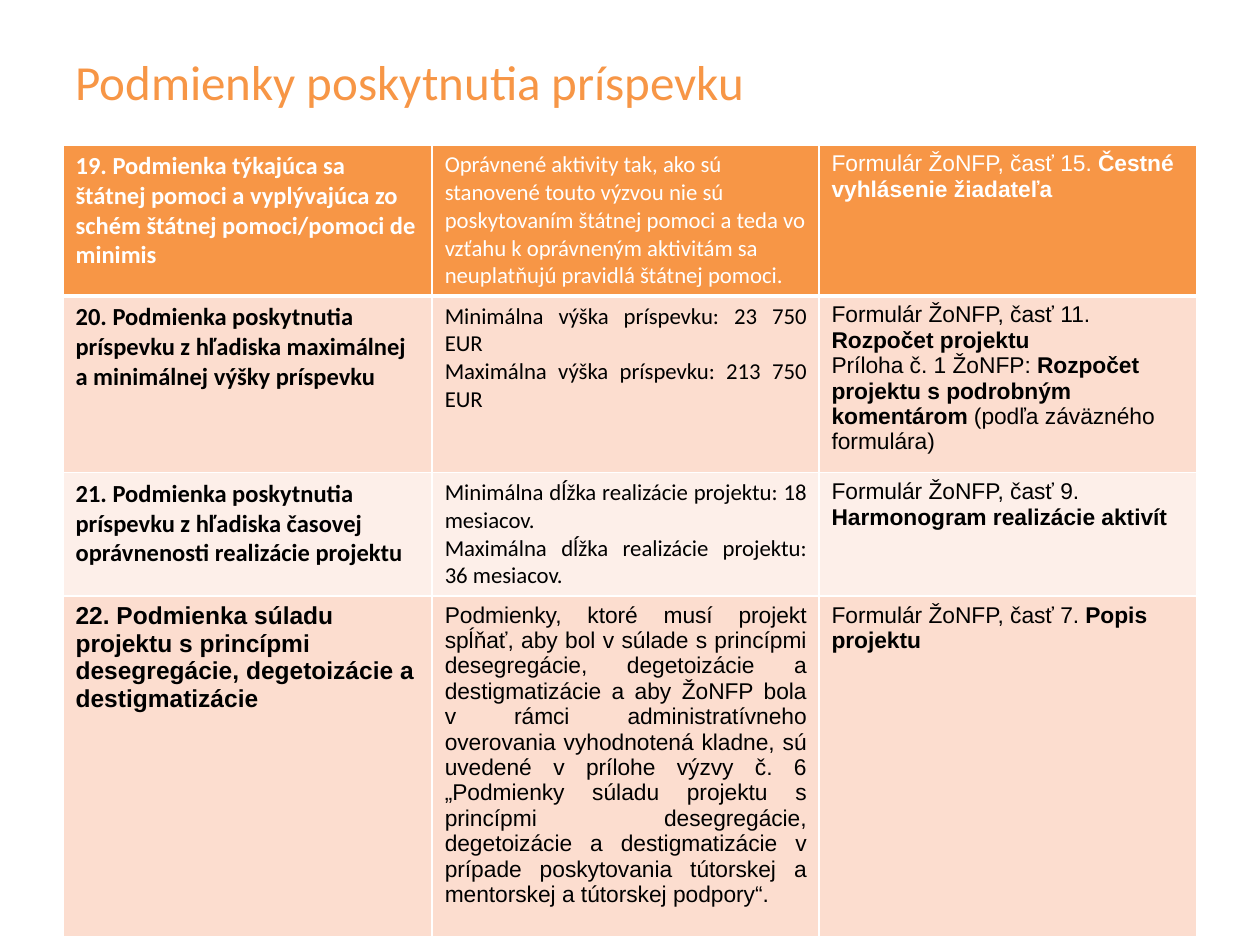
from dataclasses import dataclass
from typing import NamedTuple

from lxml import etree
from pptx import Presentation
from pptx.dml.color import RGBColor
from pptx.enum.text import MSO_ANCHOR, PP_ALIGN
from pptx.oxml.ns import qn
from pptx.util import Inches, Pt

MIDDLE = MSO_ANCHOR.MIDDLE
LEFT, JUSTIFY = PP_ALIGN.LEFT, PP_ALIGN.JUSTIFY


@dataclass(frozen=True)
class Theme:
    accent: str = "F79646"
    band_dark: str = "FCDDCF"
    band_light: str = "FDEFE9"
    white: str = "FFFFFF"
    black: str = "000000"
    heading_font: str = "Calibri"
    body_font: str = "Arial"
    title_size: int = 28
    condition_size: int = 14
    detail_size: int = 13
    border: int = 1
    header_border: int = 3


class Span(NamedTuple):
    text: str
    bold: bool = False


class Style(NamedTuple):
    font: str
    size: int
    color: str
    align: PP_ALIGN = LEFT


class Condition(NamedTuple):
    height: float
    name: str
    details: list[str]
    evidence: list[list[Span]]
    font: str


THEME = Theme()
COLUMN_WIDTHS = (2.93, 3.07, 3.0)

CONDITIONS = [
    Condition(
        1.2,
        "19. Podmienka týkajúca sa štátnej pomoci a vyplývajúca zo schém "
        "štátnej pomoci/pomoci de minimis",
        ["Oprávnené aktivity tak, ako sú stanovené touto výzvou nie sú "
         "poskytovaním štátnej pomoci a teda vo vzťahu k oprávneným aktivitám "
         "sa neuplatňujú pravidlá štátnej pomoci."],
        [[Span("Formulár ŽoNFP, časť 15. "),
          Span("Čestné vyhlásenie žiadateľa", True)]],
        THEME.heading_font,
    ),
    Condition(
        1.3,
        "20. Podmienka poskytnutia príspevku z hľadiska maximálnej "
        "a minimálnej výšky príspevku",
        ["Minimálna výška príspevku: 23 750 EUR",
         "Maximálna výška príspevku: 213 750 EUR"],
        [[Span("Formulár ŽoNFP, časť 11. "), Span("Rozpočet projektu", True)],
         [Span("Príloha č. 1 ŽoNFP: "),
          Span("Rozpočet projektu s podrobným komentárom ", True),
          Span("(podľa záväzného formulára)")]],
        THEME.heading_font,
    ),
    Condition(
        0.98,
        "21. Podmienka poskytnutia príspevku z hľadiska časovej "
        "oprávnenosti realizácie projektu",
        ["Minimálna dĺžka realizácie projektu: 18 mesiacov.",
         "Maximálna dĺžka realizácie projektu: 36 mesiacov."],
        [[Span("Formulár ŽoNFP, časť 9. "),
          Span("Harmonogram realizácie aktivít", True)]],
        THEME.heading_font,
    ),
    Condition(
        2.52,
        "22. Podmienka súladu projektu s princípmi desegregácie, "
        "degetoizácie a destigmatizácie",
        ["Podmienky, ktoré musí projekt spĺňať, aby bol v súlade s princípmi "
         "desegregácie, degetoizácie a destigmatizácie a aby ŽoNFP bola v rámci "
         "administratívneho overovania vyhodnotená kladne, sú uvedené v prílohe "
         "výzvy č. 6 „Podmienky súladu projektu s princípmi desegregácie, "
         "degetoizácie a destigmatizácie v prípade poskytovania tútorskej "
         "a mentorskej a tútorskej podpory“."],
        [[Span("Formulár ŽoNFP, časť 7. "), Span("Popis projektu", True)]],
        THEME.body_font,
    ),
]


def write(tf, paragraphs: list[list[Span]], style: Style) -> None:
    tf.word_wrap = True
    for i, spans in enumerate(paragraphs):
        p = tf.add_paragraph() if i else tf.paragraphs[0]
        p.alignment = style.align
        for span in spans:
            r = p.add_run()
            r.text = span.text
            r.font.name = style.font
            r.font.size = Pt(style.size)
            r.font.bold = span.bold
            r.font.color.rgb = RGBColor.from_string(style.color)


def set_borders(cell, top: int, bottom: int) -> None:
    """Draw white cell borders; lines must precede the fill in tcPr."""
    tc_pr = cell._tc.get_or_add_tcPr()
    sides = {"a:lnL": THEME.border, "a:lnR": THEME.border, "a:lnT": top, "a:lnB": bottom}
    for i, (tag, width) in enumerate(sides.items()):
        ln = etree.Element(qn(tag), w=str(Pt(width)))
        fill = etree.SubElement(ln, qn("a:solidFill"))
        etree.SubElement(fill, qn("a:srgbClr"), val=THEME.white)
        tc_pr.insert(i, ln)


def add_title(slide, text: str) -> None:
    tb = slide.shapes.add_textbox(Inches(0.5), Inches(0.3), Inches(9), Inches(0.69))
    tb.text_frame.vertical_anchor = MIDDLE
    write(tb.text_frame, [[Span(text)]],
          Style(THEME.heading_font, THEME.title_size, THEME.accent))


def add_conditions_table(slide, conditions: list[Condition]) -> None:
    height = sum(c.height for c in conditions)
    table = slide.shapes.add_table(
        len(conditions), len(COLUMN_WIDTHS), Inches(0.5), Inches(1.15),
        Inches(sum(COLUMN_WIDTHS)), Inches(height)).table
    for column, width in zip(table.columns, COLUMN_WIDTHS):
        column.width = Inches(width)

    for i, condition in enumerate(conditions):
        table.rows[i].height = Inches(condition.height)
        header = i == 0
        band = THEME.band_dark if i % 2 else THEME.band_light
        fill = THEME.accent if header else band
        color = THEME.white if header else THEME.black
        align = LEFT if header else JUSTIFY
        contents = [
            ([[Span(condition.name, True)]],
             Style(condition.font, THEME.condition_size, color)),
            ([[Span(detail)] for detail in condition.details],
             Style(condition.font, THEME.detail_size, color, align)),
            (condition.evidence,
             Style(THEME.body_font, THEME.detail_size, color)),
        ]
        for cell, (paragraphs, style) in zip(table.rows[i].cells, contents):
            cell.fill.solid()
            cell.fill.fore_color.rgb = RGBColor.from_string(fill)
            set_borders(cell,
                        top=THEME.header_border if i == 1 else THEME.border,
                        bottom=THEME.header_border if header else THEME.border)
            write(cell.text_frame, paragraphs, style)


def main() -> None:
    prs = Presentation()
    prs.slide_width, prs.slide_height = Inches(10), Inches(7.5)
    slide = prs.slides.add_slide(prs.slide_layouts[6])
    add_title(slide, "Podmienky poskytnutia príspevku")
    add_conditions_table(slide, CONDITIONS)
    prs.save("out.pptx")


if __name__ == "__main__":
    main()
